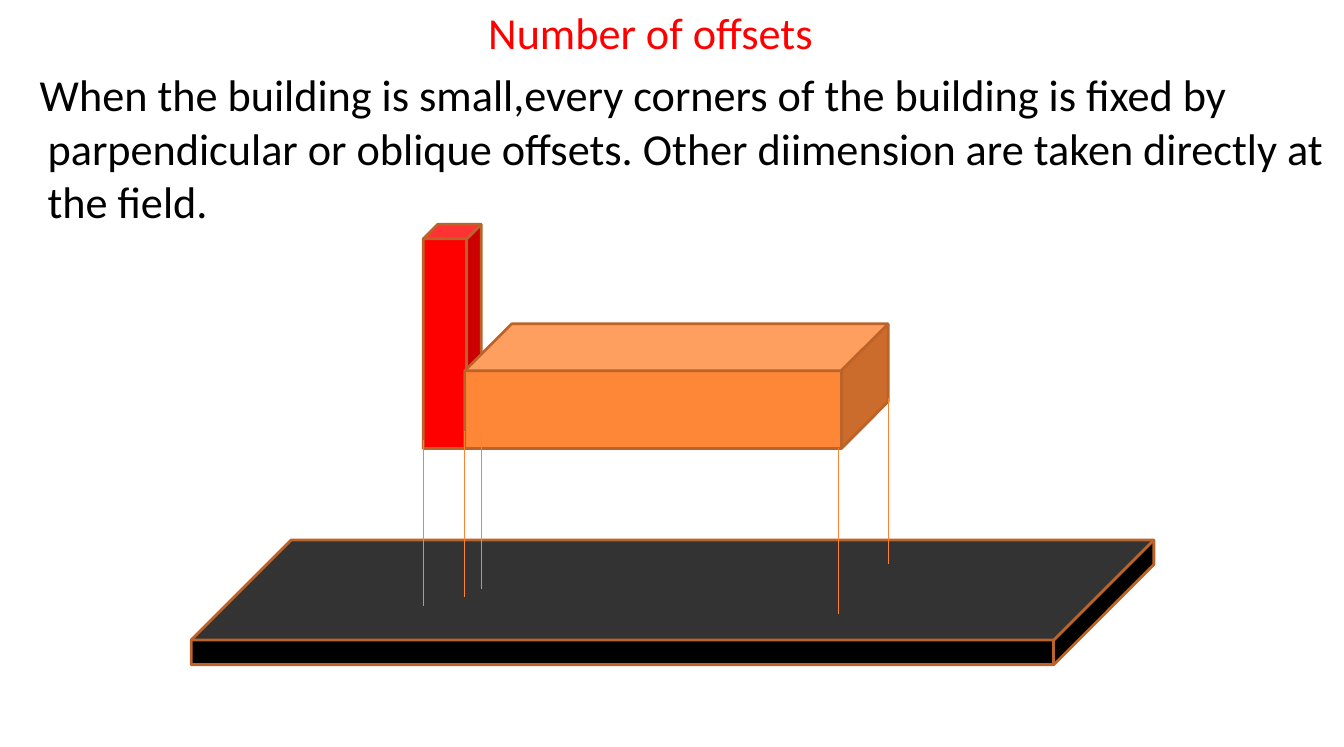
from pptx import Presentation
from pptx.dml.color import RGBColor
from pptx.enum.shapes import MSO_CONNECTOR, MSO_SHAPE
from pptx.enum.text import MSO_ANCHOR, MSO_AUTO_SIZE, PP_ALIGN
from pptx.oxml.ns import qn
from pptx.util import Cm, Pt

CUBE = MSO_SHAPE.CUBE
STRAIGHT = MSO_CONNECTOR.STRAIGHT
TOP = MSO_ANCHOR.TOP
NO_FIT = MSO_AUTO_SIZE.NONE
LEFT, CENTER = PP_ALIGN.LEFT, PP_ALIGN.CENTER

RED = RGBColor(0xFF, 0x00, 0x00)
BLACK = RGBColor(0x00, 0x00, 0x00)
ORANGE = RGBColor(0xFE, 0x86, 0x37)
EDGE_BROWN = RGBColor(0xBC, 0x63, 0x29)
OFFSET_ORANGE = RGBColor(0xFD, 0x82, 0x31)


class SlideBuilder:
    font = "Calibri"
    size = Pt(32)

    def __init__(self, slide):
        self.slide = slide

    def fill_placeholder(self, index, text, box, color, align):
        holder = self.slide.placeholders[index]
        holder.left, holder.top, holder.width, holder.height = map(Cm, box)
        frame = holder.text_frame
        frame.word_wrap = True
        frame.auto_size = NO_FIT
        frame.vertical_anchor = TOP
        paragraph = frame.paragraphs[0]
        paragraph.alignment = align
        paragraph.space_before = Pt(0)
        run = paragraph.add_run()
        run.text = text
        run.font.name = self.font
        run.font.size = self.size
        run.font.color.rgb = color
        return paragraph

    def title(self, text, box):
        self.fill_placeholder(0, text, box, RED, CENTER)

    def body(self, text, box):
        paragraph = self.fill_placeholder(1, text, box, BLACK, LEFT)
        # Unbulleted, with the first line hanging slightly to the left
        properties = paragraph._p.get_or_add_pPr()
        properties.set("marL", str(Cm(0.96)))
        properties.set("indent", str(Cm(-0.2)))
        properties.append(properties.makeelement(qn("a:buNone"), {}))

    def cube(self, box, depth, color):
        cube = self.slide.shapes.add_shape(CUBE, *map(Cm, box))
        cube.adjustments[0] = depth
        cube.shadow.inherit = False
        cube.fill.solid()
        cube.fill.fore_color.rgb = color
        cube.line.color.rgb = EDGE_BROWN
        cube.line.width = Pt(2)

    def offset(self, x, top, length):
        offset = self.slide.shapes.add_connector(
            STRAIGHT, Cm(x), Cm(top), Cm(x), Cm(top + length))
        offset.line.color.rgb = OFFSET_ORANGE
        offset.line.width = Pt(0.75)
        properties = offset._element.spPr
        properties.append(properties.makeelement(qn("a:effectLst"), {}))


def main():
    presentation = Presentation()
    presentation.slide_width = Cm(34.29)
    presentation.slide_height = Cm(19.05)
    layout = presentation.slide_layouts[1]
    builder = SlideBuilder(presentation.slides.add_slide(layout))

    # Heading and explanation
    builder.title("Number of offsets", (0, 0, 33.2, 1.6))
    builder.body(
        "When the building is small,every corners of the building is fixed by "
        "parpendicular or oblique offsets. Other diimension are taken directly "
        "at the field.", (0, 1.6, 34.29, 4.2))

    # Building above the ground
    tower_x, hall_x = 10.8, 11.86
    builder.cube((tower_x, 5.72, 1.48, 5.72), 0.25, RED)
    builder.cube((hall_x, 8.26, 10.8, 3.18), 0.376, ORANGE)
    builder.cube((4.88, 13.77, 24.56, 3.18), 0.802, BLACK)

    # Offsets from the corners to the ground
    for x, top, length in (
        (hall_x + 10.8, 10.16, 4.23),
        (21.39, 11.43, 4.23),
        (hall_x, 11, 4.23),
        (tower_x, 11.22, 4.23),
        (tower_x + 1.48, 11, 4.03),
    ):
        builder.offset(x, top, length)

    presentation.save("out.pptx")


if __name__ == "__main__":
    main()
